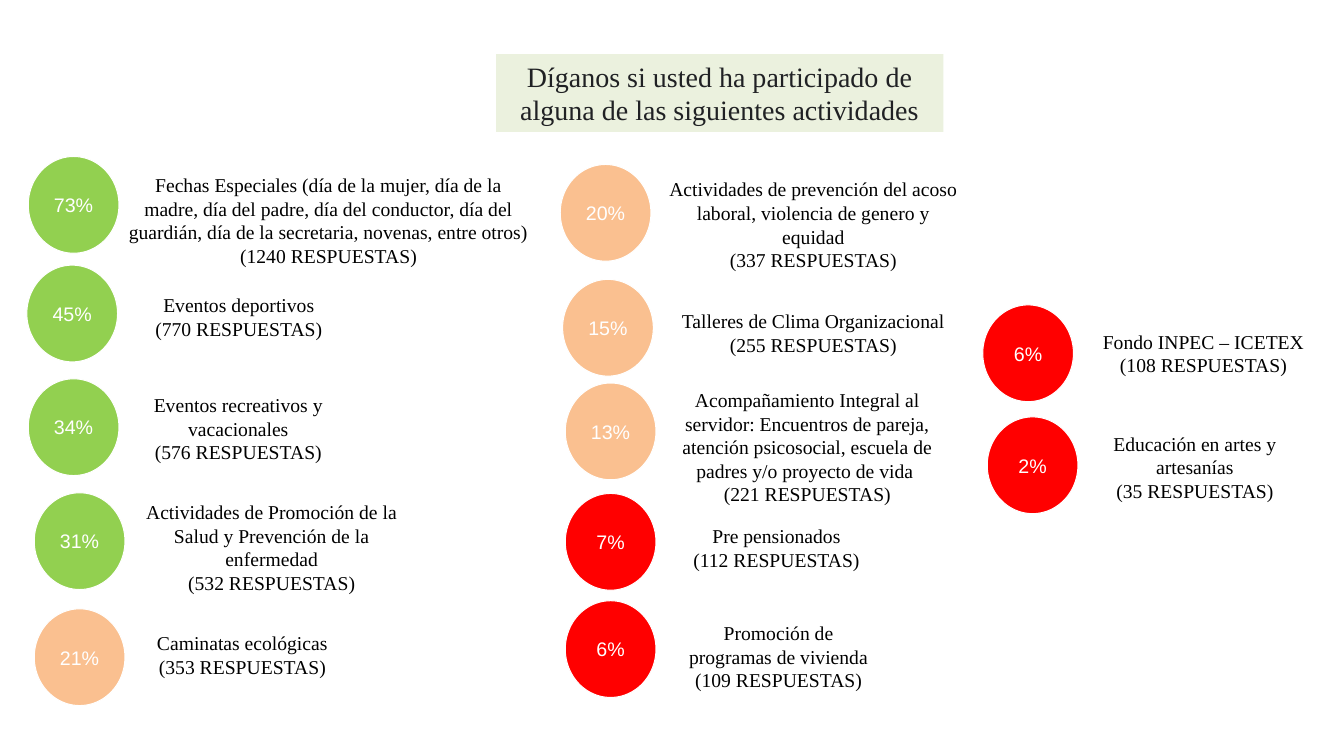
from dataclasses import dataclass

from pptx import Presentation
from pptx.dml.color import RGBColor
from pptx.enum.shapes import MSO_SHAPE
from pptx.enum.text import MSO_ANCHOR, MSO_AUTO_SIZE, PP_ALIGN
from pptx.slide import Slide
from pptx.text.text import TextFrame
from pptx.util import Pt

OVAL = MSO_SHAPE.OVAL
TOP, MIDDLE = MSO_ANCHOR.TOP, MSO_ANCHOR.MIDDLE
CENTER = PP_ALIGN.CENTER
NO_AUTOFIT = MSO_AUTO_SIZE.NONE

SERIF, SANS = "Times New Roman", "Arial"
BLACK, WHITE, CHARCOAL = "000000", "FFFFFF", "202124"
GREEN, ORANGE, RED, PALE_GREEN = "92D050", "FAC090", "FF0000", "EBF1DE"

CIRCLE_WIDTH, CIRCLE_HEIGHT = 64.8, 69.1
INSET, LINE_HEIGHT = 7.2, 17
TITLE_INSET = 3.6


@dataclass(frozen=True)
class Activity:
    name: str
    responses: int
    percent: int
    circle_left: float
    circle_top: float
    label_left: float
    label_top: float
    label_width: float
    lines: int


ACTIVITIES = [
    Activity("Fechas Especiales (día de la mujer, día de la madre, día del padre, "
             "día del conductor, día del guardián, día de la secretaria, novenas, "
             "entre otros)", 1240, 73, 20.2, 111.8, 84.2, 116.6, 301, 4),
    Activity("Eventos deportivos", 770, 45, 19.2, 189.4, 64.1, 202.3, 213.1, 2),
    Activity("Eventos recreativos y vacacionales",
             576, 34, 20.2, 270.6, 76.3, 273.6, 187.9, 3),
    Activity("Actividades de Promoción de la Salud y Prevención de la enfermedad",
             532, 31, 24.5, 352, 89.3, 349.9, 209.5, 4),
    Activity("Caminatas ecológicas", 353, 21, 24.5, 434.9, 83.5, 443.5, 179.3, 2),
    Activity("Actividades de prevención del acoso laboral, violencia de genero y equidad",
             337, 20, 400.2, 117.5, 469.4, 119.5, 223.2, 4),
    Activity("Talleres de Clima Organizacional",
             255, 15, 401.9, 199.6, 469.4, 213.8, 223.2, 2),
    Activity("Acompañamiento Integral al servidor: Encuentros de pareja, atención "
             "psicosocial, escuela de padres y/o proyecto de vida ",
             221, 13, 403.8, 273.6, 469.4, 270, 214.6, 5),
    Activity("Pre pensionados", 112, 7, 403.8, 352.5, 480.2, 367.2, 149, 2),
    Activity("Promoción de programas de vivienda",
             109, 6, 403.8, 429.1, 480.2, 436.3, 151.9, 3),
    Activity("Fondo INPEC – ICETEX", 108, 6, 702, 217.8, 769.7, 228.2, 180, 2),
    Activity("Educación en artes y artesanías",
             35, 2, 705.2, 297.8, 763.9, 301, 179.3, 3),
]


def color(value: str) -> RGBColor:
    return RGBColor.from_string(value)


def level_color(percent: int) -> str:
    if percent > 30:
        return GREEN
    return ORANGE if percent > 10 else RED


def write_text(frame: TextFrame, texts: list[str], font_name: str, size: float,
               font_color: str, anchor: MSO_ANCHOR, vertical_inset: float = INSET) -> None:
    frame.word_wrap = True
    frame.auto_size = NO_AUTOFIT
    frame.vertical_anchor = anchor
    frame.margin_left = frame.margin_right = Pt(INSET)
    frame.margin_top = frame.margin_bottom = Pt(vertical_inset)
    for index, text in enumerate(texts):
        paragraph = frame.add_paragraph() if index else frame.paragraphs[0]
        paragraph.alignment = CENTER
        run = paragraph.add_run()
        run.text = text
        run.font.name = font_name
        run.font.size = Pt(size)
        run.font.color.rgb = color(font_color)


def format_title(slide: Slide) -> None:
    title = slide.shapes.title
    title.left, title.top, title.width, title.height = Pt(354.3), Pt(38.6), Pt(319.5), Pt(55.7)
    title.fill.solid()
    title.fill.fore_color.rgb = color(PALE_GREEN)
    write_text(title.text_frame,
               ["Díganos si usted ha participado de alguna de las siguientes actividades"],
               SERIF, 20, CHARCOAL, TOP, TITLE_INSET)


def draw_label(slide: Slide, activity: Activity) -> None:
    height = 2 * INSET + activity.lines * LINE_HEIGHT
    label = slide.shapes.add_textbox(Pt(activity.label_left), Pt(activity.label_top),
                                     Pt(activity.label_width), Pt(height))
    write_text(label.text_frame, [activity.name, f"({activity.responses} RESPUESTAS)"],
               SERIF, 14, BLACK, TOP)


def draw_circle(slide: Slide, activity: Activity) -> None:
    circle = slide.shapes.add_shape(OVAL, Pt(activity.circle_left), Pt(activity.circle_top),
                                    Pt(CIRCLE_WIDTH), Pt(CIRCLE_HEIGHT))
    circle.shadow.inherit = False
    circle.fill.solid()
    circle.fill.fore_color.rgb = color(level_color(activity.percent))
    circle.line.color.rgb = color(WHITE)
    circle.line.width = Pt(0.75)
    write_text(circle.text_frame, [f"{activity.percent}%"], SANS, 14, WHITE, MIDDLE)


def main() -> None:
    presentation = Presentation()
    presentation.slide_width, presentation.slide_height = Pt(960), Pt(540)
    slide = presentation.slides.add_slide(presentation.slide_layouts.get_by_name("Title Only"))
    format_title(slide)
    for activity in ACTIVITIES:
        draw_label(slide, activity)
        draw_circle(slide, activity)
    presentation.save("out.pptx")


if __name__ == "__main__":
    main()
